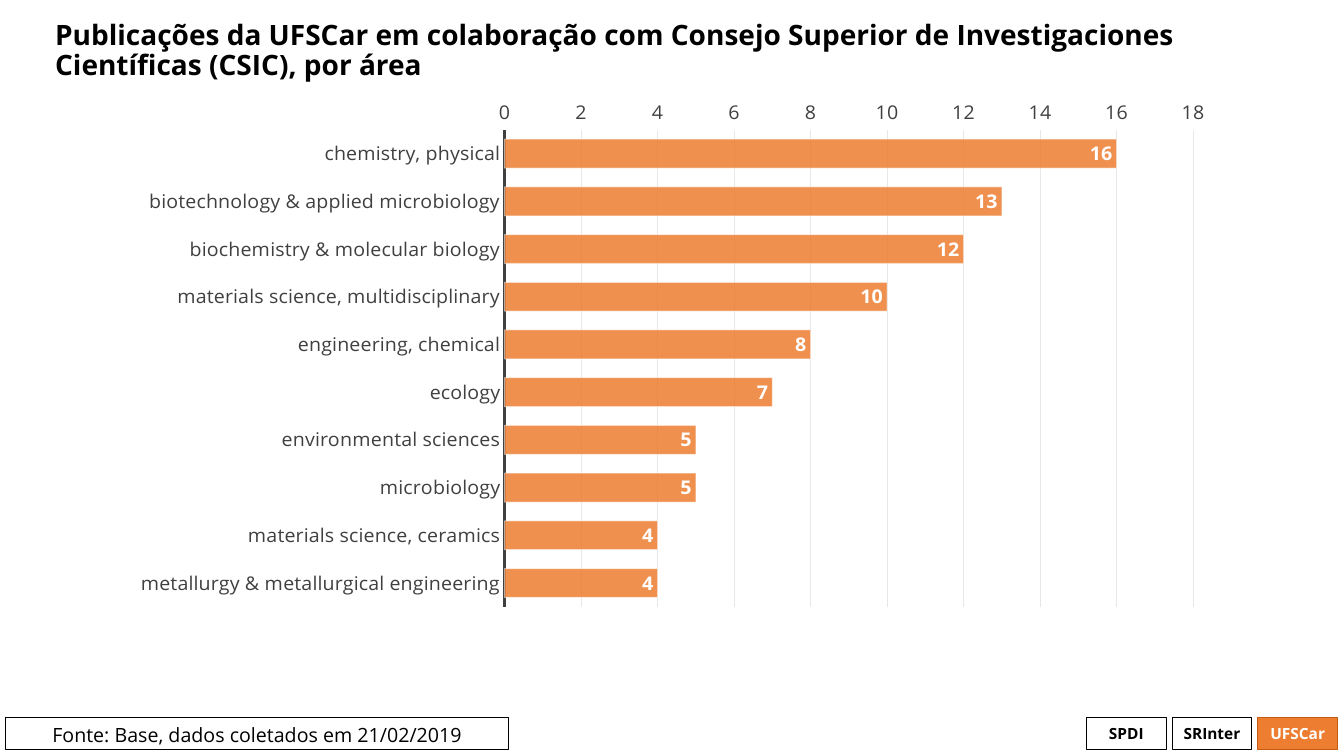
from pptx import Presentation
from pptx.chart.data import CategoryChartData
from pptx.dml.color import RGBColor
from pptx.enum.chart import XL_AXIS_CROSSES, XL_CHART_TYPE, XL_LABEL_POSITION, XL_TICK_MARK
from pptx.enum.shapes import MSO_SHAPE
from pptx.enum.text import MSO_ANCHOR, PP_ALIGN
from pptx.oxml import parse_xml
from pptx.oxml.ns import nsdecls
from pptx.util import Cm, Pt
from lxml.etree import SubElement


def paint(color_format, color):
    color_format.rgb = RGBColor.from_string(color)


def style(font, size, color, bold=False):
    for name, value in {"name": "Open Sans", "size": Pt(size), "bold": bold}.items():
        setattr(font, name, value)
    font.fill.solid()
    paint(font.fill.fore_color, color)


deck = Presentation()
deck.slide_width = Cm(33.87)
deck.slide_height = Cm(19.05)
page = deck.slides.add_slide(deck.slide_layouts[6])

title = page.shapes.add_textbox(Cm(1.14), Cm(0.15), Cm(31.52), Cm(2.31))
frame = title.text_frame
frame.word_wrap = True
frame.vertical_anchor = MSO_ANCHOR.MIDDLE
para = frame.paragraphs[0]
para.line_spacing = 0.9
span = para.add_run()
span.text = (
    "Publicações da UFSCar em colaboração com Consejo Superior de "
    "Investigaciones Científicas (CSIC), por área"
)
style(span.font, 20, "000000", True)

areas = {
    "chemistry, physical": 16,
    "biotechnology & applied microbiology": 13,
    "biochemistry & molecular biology": 12,
    "materials science, multidisciplinary": 10,
    "engineering, chemical": 8,
    "ecology": 7,
    "environmental sciences": 5,
    "microbiology": 5,
    "materials science, ceramics": 4,
    "metallurgy & metallurgical engineering": 4,
}
chart_data = CategoryChartData()
chart_data.categories = list(areas)
chart_data.add_series("Publicações", list(areas.values()))
chart = page.shapes.add_chart(
    XL_CHART_TYPE.BAR_CLUSTERED, Cm(2.92), Cm(2.51), Cm(27.99), Cm(14), chart_data
).chart
chart.has_legend = False
chart.has_title = False
style(chart.font, 14, "000000")

area_axis = chart.category_axis
count_axis = chart.value_axis
for axis in (area_axis, count_axis):
    axis.major_tick_mark = XL_TICK_MARK.NONE
    axis.minor_tick_mark = XL_TICK_MARK.NONE
    style(axis.tick_labels.font, 14, "404040")
area_axis.reverse_order = True
area_axis.crosses = XL_AXIS_CROSSES.MAXIMUM
area_axis.format.line.width = Pt(2)
paint(area_axis.format.line.color, "404040")
for name, value in {"minimum_scale": 0, "maximum_scale": 18, "major_unit": 2}.items():
    setattr(count_axis, name, value)
count_axis.format.line.fill.background()
grid = count_axis.major_gridlines.format.line
grid.width = Pt(0.75)
paint(grid.color, "E7E7E7")

plot = chart.plots[0]
plot.gap_width = 65
plot.vary_by_categories = False
bars = plot.series[0]
bars.format.fill.solid()
paint(bars.format.fill.fore_color, "ED7D31")
bars.format.line.width = Pt(0.75)
paint(bars.format.line.color, "FFFFFF")
bar_colors = chart.element.xpath(".//c:ser/c:spPr//a:srgbClr")
for color, opacity in zip(bar_colors, (85, 50)):
    alpha = SubElement(color, "{http://schemas.openxmlformats.org/drawingml/2006/main}alpha")
    alpha.set("val", str(opacity * 1000))

labels = bars.data_labels
labels.show_value = True
labels.position = XL_LABEL_POSITION.INSIDE_END
style(labels.font, 14, "FFFFFF", True)

plot_area = chart.element.xpath(".//c:plotArea")[0]
for layout in plot_area.xpath("./c:layout"):
    plot_area.remove(layout)
plot_area.insert(0, parse_xml(
    f'<c:layout {nsdecls("c")}><c:manualLayout><c:layoutTarget val="inner"/>'
    '<c:xMode val="edge"/><c:yMode val="edge"/><c:x val="0.35"/><c:y val="0.02"/>'
    '<c:w val="0.62"/><c:h val="0.89"/></c:manualLayout></c:layout>'
))

footer = [
    ("Fonte: Base, dados coletados em 21/02/2019", 0.15, 12.67, 14, False, None, "000000", "000000"),
    ("SPDI", 27.38, 2.01, 11, True, None, "000000", "000000"),
    ("SRInter", 27.38 + 2.16, 2.01, 11, True, None, "000000", "000000"),
    ("UFSCar", 27.38 + 2 * 2.16, 2.01, 11, True, "ED7D31", "C55A11", "FFFFFF"),
]
for text, left, width, size, bold, fill, line, color in footer:
    box = page.shapes.add_shape(MSO_SHAPE.RECTANGLE, Cm(left), Cm(18.08), Cm(width), Cm(0.81))
    box.shadow.inherit = False
    if fill:
        box.fill.solid()
        paint(box.fill.fore_color, fill)
    else:
        box.fill.background()
    box.line.width = Pt(0.75)
    paint(box.line.color, line)
    box.text_frame.vertical_anchor = MSO_ANCHOR.MIDDLE if bold else MSO_ANCHOR.TOP
    para = box.text_frame.paragraphs[0]
    para.alignment = PP_ALIGN.CENTER
    span = para.add_run()
    span.text = text
    style(span.font, size, color, bold)

deck.save("out.pptx")
